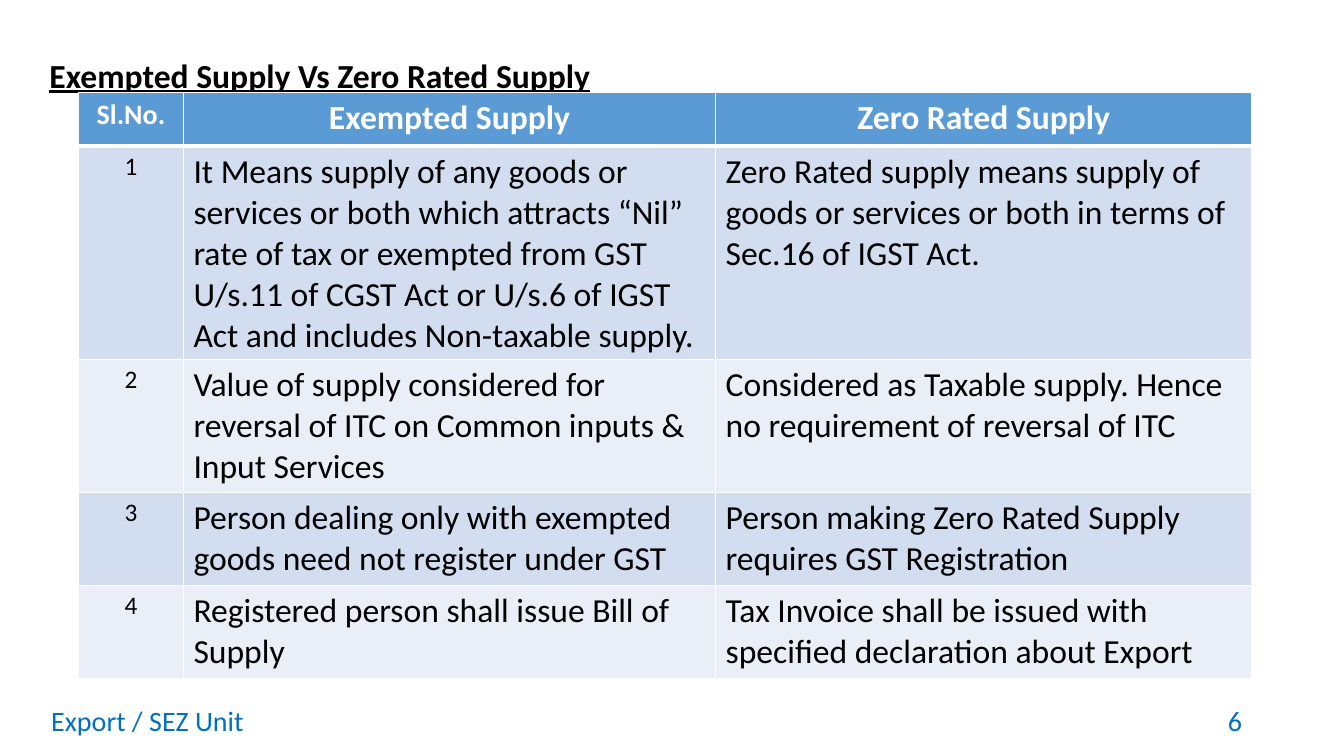
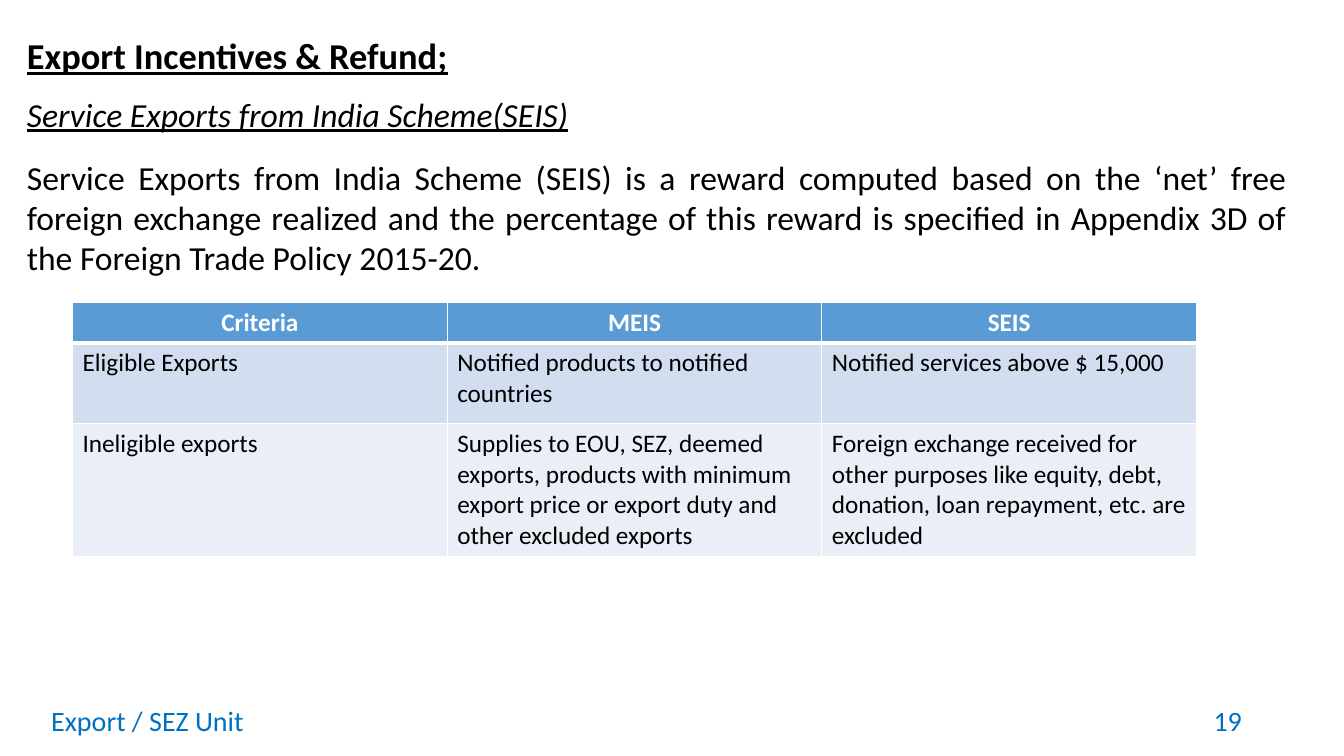
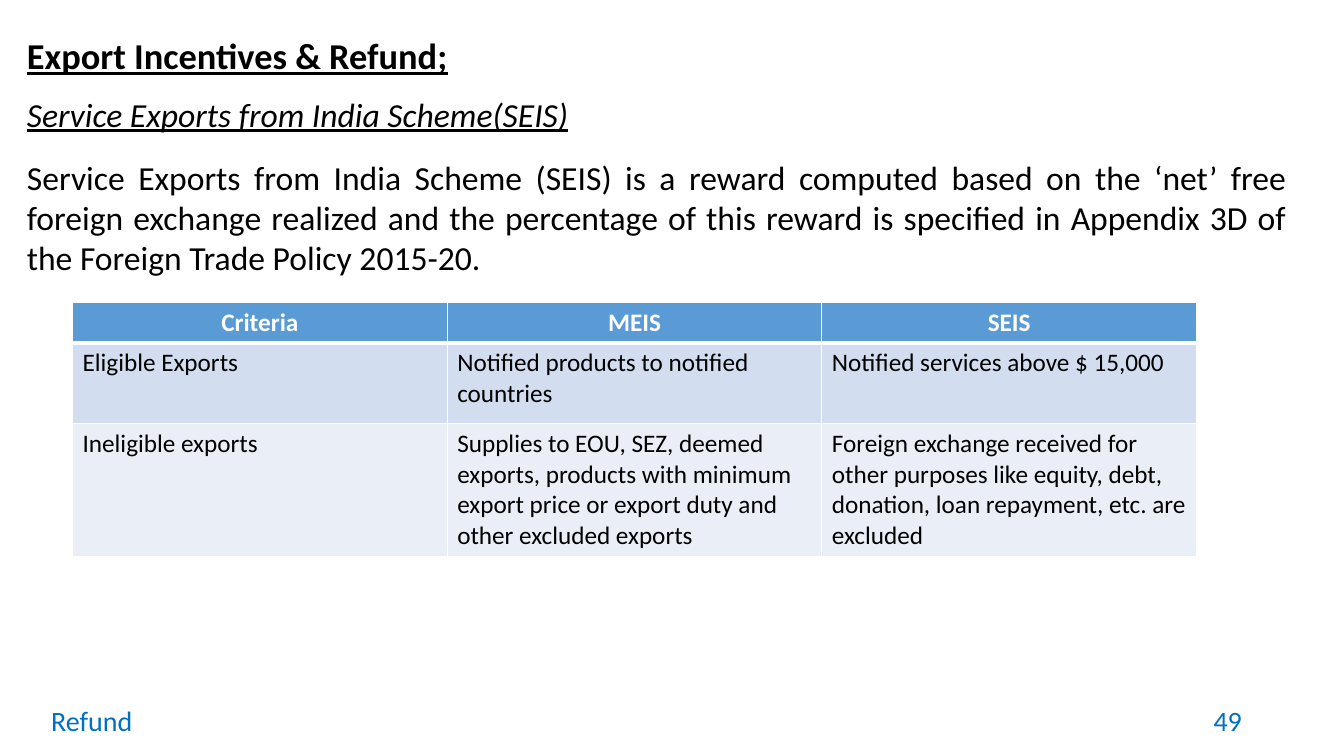
from lxml.etree import SubElement
from pptx import Presentation
from pptx.dml.color import RGBColor as RGB
from pptx.enum.text import MSO_ANCHOR as ANCHOR, MSO_AUTO_SIZE as FIT, PP_ALIGN as ALIGN
from pptx.oxml.ns import qn
from pptx.util import Inches, Pt

COLORS = {"ink": "000000", "paper": "FFFFFF", "head": "5B9BD5",
          "odd": "D2DEEF", "even": "EAEFF7", "footer": "0070C0"}
FONT = "Calibri"
COLS, ROWS = 80, 45
TITLE_ONLY, TITLE_BODY = 5, 1


class Deck:
    """Build slides on an 80 by 45 grid in one shared style."""

    def __init__(self):
        self.prs = Presentation()
        self.prs.slide_width = self.grid(COLS)
        self.prs.slide_height = self.grid(ROWS)
        self.s = None

    def grid(self, n):
        """Turn grid units into a length."""
        return Inches(n / 6)

    def place(self, sp, at):
        """Move a shape to left, top, width, height in grid units."""
        sp.left, sp.top, sp.width, sp.height = map(self.grid, at)

    def style(self, p, size, color="ink", align=ALIGN.LEFT, bold=False, italic=False, underline=False):
        """Format one paragraph and its runs."""
        p.alignment = align
        for r in p.runs:
            f = r.font
            f.name, f.size, f.bold, f.italic, f.underline = FONT, Pt(size), bold, italic, underline
            f.color.rgb = RGB.from_string(COLORS[color])

    def slide(self, layout, footer, number):
        """Start a slide with its footer and page number."""
        self.s = self.prs.slides.add_slide(self.prs.slide_layouts[layout])
        self.footer(footer, 2.46, 27, ALIGN.LEFT)
        self.footer(str(number), 56.52, 18, ALIGN.RIGHT)

    def footer(self, text, left, width, align):
        """Add one text on the footer line."""
        sp = self.s.shapes.add_textbox(*map(self.grid, (left, 41.7, width, 2.4)))
        tf = sp.text_frame
        tf.word_wrap = True
        tf.vertical_anchor = ANCHOR.MIDDLE
        tf.text = text
        self.style(tf.paragraphs[0], 20, "footer", align)

    def fill_holder(self, sp, text, at):
        """Place a placeholder and give it plain top-aligned text."""
        self.place(sp, at)
        tf = sp.text_frame
        tf.text = text
        tf.word_wrap = True
        tf.auto_size = FIT.NONE
        tf.vertical_anchor = ANCHOR.TOP
        return tf.paragraphs

    def title(self, text, left, top, size):
        """Write the underlined heading."""
        p, = self.fill_holder(self.s.shapes.title, text, (left, top, 76.2, 3))
        self.style(p, size, bold=True, underline=True)

    def body(self, subtitle, text):
        """Write an italic subtitle and a justified paragraph."""
        sp = self.s.placeholders[1]
        sub, para = self.fill_holder(sp, f"{subtitle}\n{text}", (1, 5.28, 76.2, 12))
        self.style(sub, 24, italic=True, underline=True)
        self.style(para, 24, align=ALIGN.JUSTIFY)
        for p, before in ((sub, 0), (para, 16)):
            p.space_before, p.space_after = Pt(before), Pt(0)
            pPr = p._p.get_or_add_pPr()
            pPr.set("marL", "0")
            pPr.set("indent", "0")
            SubElement(pPr, qn("a:buNone"))

    def borders(self, cell, top, bottom):
        """Draw white borders round a cell."""
        tcPr = cell._tc.get_or_add_tcPr()
        for side, width in (("L", 1), ("R", 1), ("T", top), ("B", bottom)):
            ln = SubElement(tcPr, qn(f"a:ln{side}"), w=str(Pt(width)))
            fill = SubElement(ln, qn("a:solidFill"))
            SubElement(fill, qn("a:srgbClr"), val=COLORS["paper"])

    def table(self, rows, left, top, widths, heights, size, serial=None):
        """Add a banded table; serial gives head and body sizes of a number column."""
        at = map(self.grid, (left, top, sum(widths), sum(heights)))
        tbl = self.s.shapes.add_table(len(rows), len(widths), *at).table
        for col, width in zip(tbl.columns, widths):
            col.width = self.grid(width)
        for i, (row, height) in enumerate(zip(rows, heights)):
            tbl.rows[i].height = self.grid(height)
            head = i == 0
            band = "head" if head else "odd" if i % 2 else "even"
            for j, text in enumerate(row):
                cell = tbl.cell(i, j)
                numbered = serial and j == 0
                self.borders(cell, 3 if i == 1 else 1, 3 if head else 1)
                cell.fill.solid()
                cell.fill.fore_color.rgb = RGB.from_string(COLORS[band])
                cell.text = text
                self.style(cell.text_frame.paragraphs[0],
                           serial[min(i, 1)] if numbered else size,
                           "paper" if head else "ink",
                           ALIGN.CENTER if head or numbered else ALIGN.LEFT, bold=head)


SUPPLY = [
    ("Sl.No.", "Exempted Supply", "Zero Rated Supply"),
    ("1", "It Means supply of any goods or services or both which attracts “Nil” rate of tax or "
          "exempted from GST U/s.11 of CGST Act or U/s.6 of IGST Act and includes Non-taxable supply.",
     "Zero Rated supply means supply of goods or services or both in terms of Sec.16 of IGST Act."),
    ("2", "Value of supply considered for reversal of ITC on Common inputs & Input Services",
     "Considered as Taxable supply. Hence no requirement of reversal of ITC"),
    ("3", "Person dealing only with exempted goods need not register under GST",
     "Person making Zero Rated Supply requires GST Registration"),
    ("4", "Registered person shall issue Bill of Supply",
     "Tax Invoice shall be issued with specified declaration about Export"),
]
SCHEMES = [
    ("Criteria", "MEIS", "SEIS"),
    ("Eligible Exports", "Notified products to notified countries",
     "Notified services above $ 15,000"),
    ("Ineligible exports",
     "Supplies to EOU, SEZ, deemed exports, products with minimum export price or export duty "
     "and other excluded exports",
     "Foreign exchange received for other purposes like equity, debt, donation, loan repayment, "
     "etc. are excluded"),
]
SEIS = ("Service Exports from India Scheme (SEIS) is a reward computed based on the ‘net’ free "
        "foreign exchange realized and the percentage of this reward is specified in Appendix 3D "
        "of the Foreign Trade Policy 2015-20.")


def main():
    """Build and save the deck."""
    deck = Deck()
    deck.slide(TITLE_ONLY, "Export / SEZ Unit", 6)
    deck.title("Exempted Supply Vs Zero Rated Supply", 2.34, 2.94, 24)
    deck.table(SUPPLY, 4.68, 5.52, (6.24, 31.68, 31.92), (3.18, 12.72, 7.92, 5.52, 5.52),
               24, serial=(20, 18))
    for footer, number in (("Export / SEZ Unit", 19), ("Refund", 49)):
        deck.slide(TITLE_BODY, footer, number)
        deck.title("Export Incentives & Refund;", 1, 1.68, 26)
        deck.body("Service Exports from India Scheme(SEIS)", SEIS)
        deck.table(SCHEMES, 4.32, 18, (22.3,) * 3, (2.4, 4.8, 7.92), 18)
    deck.prs.save("out.pptx")


if __name__ == "__main__":
    main()
